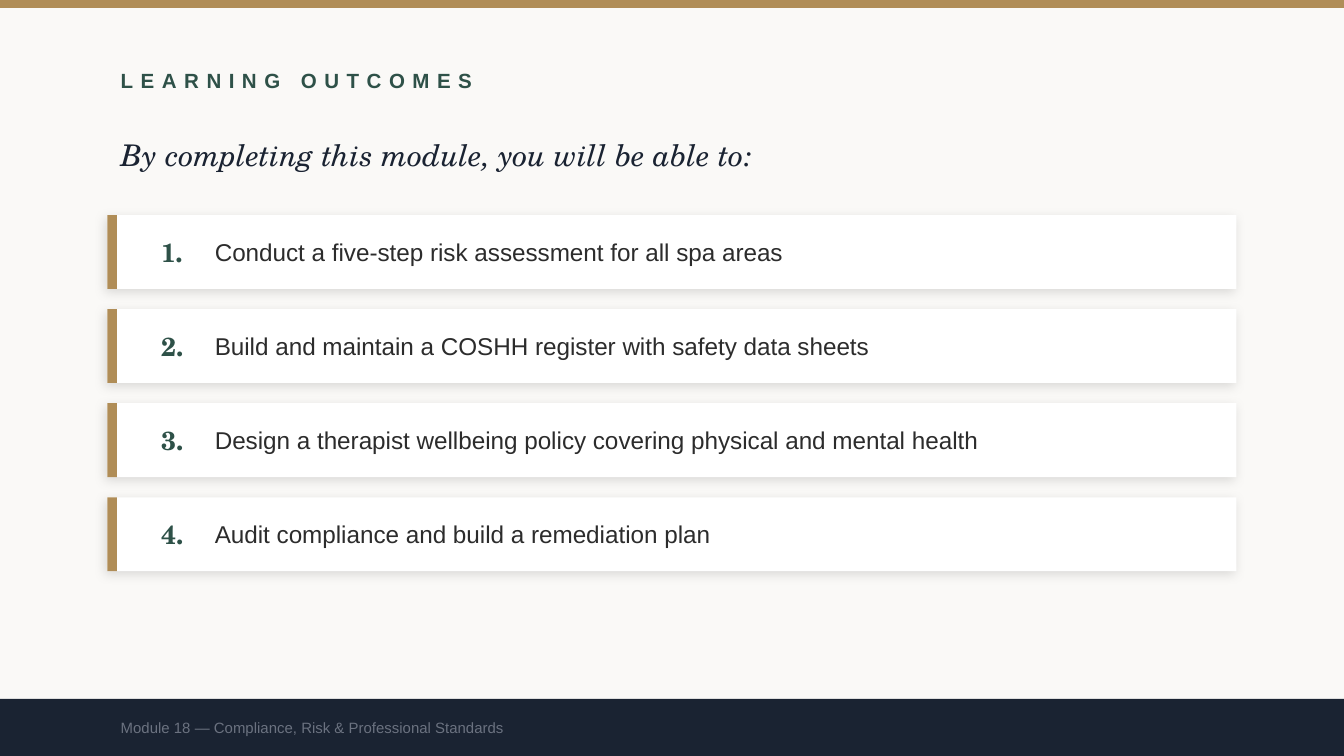
from lxml import etree
from pptx import Presentation
from pptx.dml.color import RGBColor
from pptx.enum.shapes import MSO_SHAPE
from pptx.enum.text import MSO_ANCHOR
from pptx.oxml.ns import qn
from pptx.util import Inches, Pt

RECTANGLE = MSO_SHAPE.RECTANGLE
MIDDLE = MSO_ANCHOR.MIDDLE
CELL = 0.1
COLUMNS, ROWS = 100, 56.25
MARGIN = 8
SANS, SERIF = "Arial", "TeX Gyre Schola"
COLORS = {
    "paper": "FAF9F7",
    "card": "FFFFFF",
    "gold": "B08D57",
    "green": "2E5148",
    "navy": "1A2332",
    "body": "2C2C2C",
    "muted": "6B7280",
    "shadow": "000000",
}
OUTCOMES = [
    "Conduct a five-step risk assessment for all spa areas",
    "Build and maintain a COSHH register with safety data sheets",
    "Design a therapist wellbeing policy covering physical and mental health",
    "Audit compliance and build a remediation plan",
]


def to_lengths(box):
    """Turn a box in grid columns and rows into slide lengths."""
    return [Inches(cells * CELL) for cells in box]


def add_panel(slide, box, color):
    """Add a plain filled rectangle."""
    shape = slide.shapes.add_shape(RECTANGLE, *to_lengths(box))
    shape.shadow.inherit = False
    shape.fill.solid()
    shape.fill.fore_color.rgb = RGBColor.from_string(COLORS[color])
    shape.line.fill.background()
    return shape


def add_soft_shadow(shape):
    """Give a shape a faint shadow towards the lower left."""
    effects = shape._element.spPr.find(qn("a:effectLst"))
    shadow = etree.SubElement(
        effects, qn("a:outerShdw"), blurRad=str(Pt(6)), dist=str(Pt(2)),
        dir=str(135 * 60000), algn="bl", rotWithShape="0")
    color = etree.SubElement(shadow, qn("a:srgbClr"), val=COLORS["shadow"])
    etree.SubElement(color, qn("a:alpha"), val="12000")


def add_label(slide, box, text, size, color, font=SANS, bold=False, italic=False, spacing=0):
    """Add one vertically centred line of text."""
    text_frame = slide.shapes.add_textbox(*to_lengths(box)).text_frame
    text_frame.word_wrap = True
    text_frame.vertical_anchor = MIDDLE
    text_frame.text = text
    run = text_frame.paragraphs[0].runs[0]
    run.font.name = font
    run.font.size = Pt(size)
    run.font.bold = bold
    run.font.italic = italic
    run.font.color.rgb = RGBColor.from_string(COLORS[color])
    if spacing:
        run._r.get_or_add_rPr().set("spc", str(spacing * 100))


def add_heading(slide, box):
    """Add the section label and the lead-in sentence."""
    left, top, width, height = box
    add_label(slide, (left, top, width, 4), "LEARNING OUTCOMES", 11, "green", bold=True, spacing=4)
    add_label(slide, (left, top + 5, width, height - 5),
              "By completing this module, you will be able to:", 16, "navy", SERIF, italic=True)


def add_outcome(slide, box, number, text):
    """Add one numbered outcome card with its accent bar."""
    left, top, width, height = box
    add_soft_shadow(add_panel(slide, box, "card"))
    add_panel(slide, (left, top, 0.7, height), "gold")
    add_label(slide, (left + 3, top, 4, height), f"{number}.", 14, "green", SERIF, bold=True)
    add_label(slide, (left + 7, top, width - 10, height), text, 13, "body")


def add_outcome_list(slide, box):
    """Stack the outcome cards at an equal pitch down the box."""
    left, top, width, height = box
    card_height = 5.5
    pitch = (height - card_height) / (len(OUTCOMES) - 1)
    for index, text in enumerate(OUTCOMES):
        add_outcome(slide, (left, top + index * pitch, width, card_height), index + 1, text)


def add_footer(slide, box):
    """Add the dark footer band with the module name."""
    left, top, width, height = box
    add_panel(slide, box, "navy")
    add_label(slide, (left + MARGIN, top, width - 20, height),
              "Module 18 — Compliance, Risk & Professional Standards", 8, "muted")


def main():
    """Build and save the learning outcomes slide."""
    presentation = Presentation()
    presentation.slide_width, presentation.slide_height = to_lengths((COLUMNS, ROWS))
    slide = presentation.slides.add_slide(presentation.slide_layouts[6])
    slide.background.fill.solid()
    slide.background.fill.fore_color.rgb = RGBColor.from_string(COLORS["paper"])
    add_panel(slide, (0, 0, COLUMNS, 0.6), "gold")
    add_heading(slide, (MARGIN, 4, 80, 10))
    add_outcome_list(slide, (MARGIN, 16, COLUMNS - 2 * MARGIN, 26.5))
    add_footer(slide, (0, 52, COLUMNS, ROWS - 52))
    presentation.save("out.pptx")


if __name__ == "__main__":
    main()
